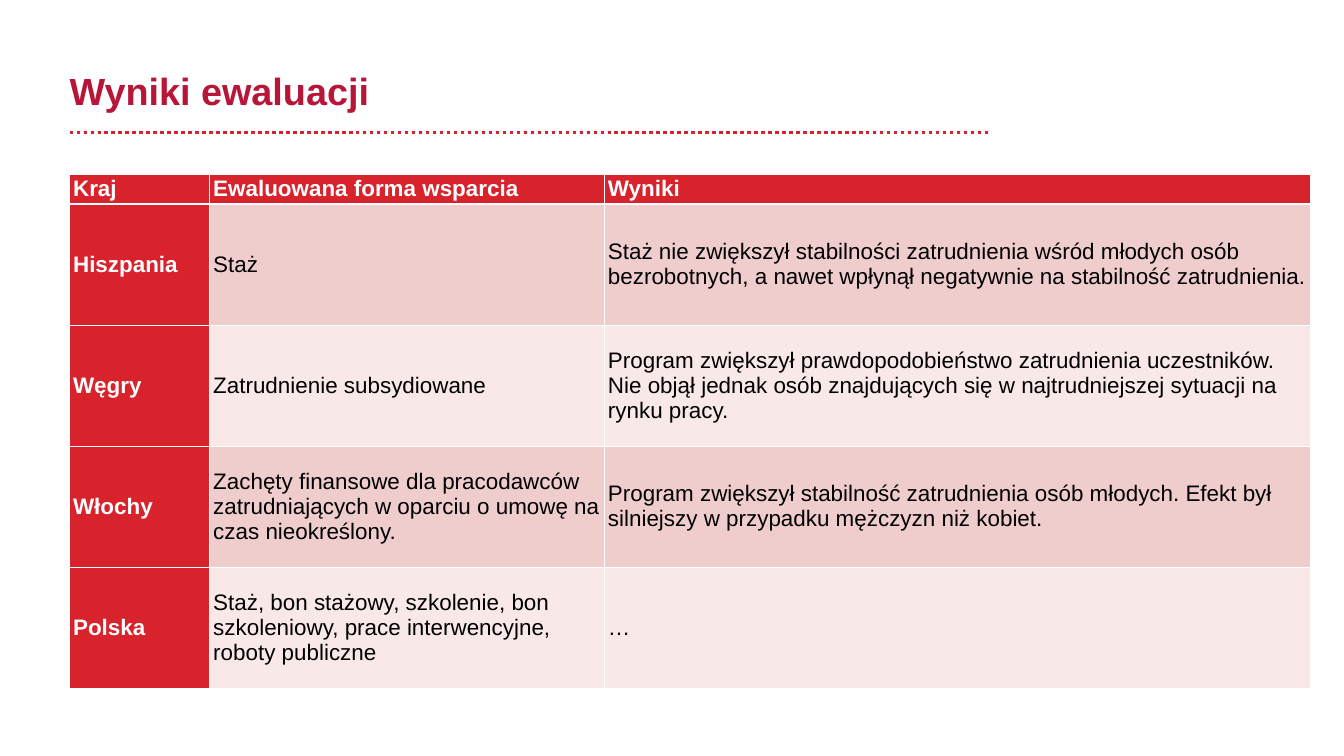
import dataclasses

import lxml.etree
import pptx
import pptx.dml.color
import pptx.enum.dml
import pptx.enum.shapes
import pptx.enum.text
import pptx.oxml.ns
import pptx.util


@dataclasses.dataclass(frozen=True)
class Theme:
    font: str = "Arial"
    title_size: int = 54
    table_size: int = 32
    title: str = "B81639"
    accent: str = "D8222C"
    bands: tuple = ("F0CDCD", "F8E8E8")
    light: str = "FFFFFF"
    dark: str = "000000"


THEME = Theme()

# Slide grid, in inches
SLIDE_WIDTH, SLIDE_HEIGHT = 26.66, 15
LEFT = 1.38
HEADING_WIDTH = 18.24
TITLE_TOP, TITLE_HEIGHT = 1.33, 0.91
RULE_TOP = 2.63
TABLE_TOP = 3.46
COLUMN_WIDTHS = (2.78, 7.83, 14)
HEADER_HEIGHT, ROW_HEIGHT = 0.59, 2.4
CELL_INSET = 0.07

ROWS = (
    ("Kraj", "Ewaluowana forma wsparcia", "Wyniki"),
    ("Hiszpania", "Staż",
     "Staż nie zwiększył stabilności zatrudnienia wśród młodych osób bezrobotnych, "
     "a nawet wpłynął negatywnie na stabilność zatrudnienia."),
    ("Węgry", "Zatrudnienie subsydiowane",
     "Program zwiększył prawdopodobieństwo zatrudnienia uczestników. "
     "Nie objął jednak osób znajdujących się w najtrudniejszej sytuacji na rynku pracy."),
    ("Włochy",
     "Zachęty finansowe dla pracodawców zatrudniających w oparciu o umowę "
     "na czas nieokreślony.",
     "Program zwiększył stabilność zatrudnienia osób młodych. "
     "Efekt był silniejszy w przypadku mężczyzn niż kobiet."),
    ("Polska",
     "Staż, bon stażowy, szkolenie, bon szkoleniowy, prace interwencyjne, "
     "roboty publiczne",
     "…"),
)


def inches(*lengths):
    return [pptx.util.Inches(length) for length in lengths]


def rgb(color):
    return pptx.dml.color.RGBColor.from_string(color)


def add_run(paragraph, text, size, color, bold):
    paragraph.alignment = pptx.enum.text.PP_ALIGN.LEFT
    run = paragraph.add_run()
    run.text = text
    run.font.name = THEME.font
    run.font.size = pptx.util.Pt(size)
    run.font.bold = bold
    run.font.color.rgb = rgb(color)


def set_title(slide, text):
    title = slide.shapes.title
    title.left, title.top, title.width, title.height = inches(
        LEFT, TITLE_TOP, HEADING_WIDTH, TITLE_HEIGHT)
    frame = title.text_frame
    frame.margin_left = frame.margin_right = frame.margin_top = frame.margin_bottom = 0
    frame.word_wrap = True
    frame.vertical_anchor = pptx.enum.text.MSO_ANCHOR.MIDDLE
    add_run(frame.paragraphs[0], text, THEME.title_size, THEME.title, True)


def add_dotted_rule(slide):
    rule = slide.shapes.add_connector(
        pptx.enum.shapes.MSO_CONNECTOR.STRAIGHT,
        *inches(LEFT, RULE_TOP, LEFT + HEADING_WIDTH, RULE_TOP))
    rule.line.color.rgb = rgb(THEME.accent)
    rule.line.width = pptx.util.Pt(5)
    rule.line.dash_style = pptx.enum.dml.MSO_LINE.ROUND_DOT
    # An empty effect list removes the connector's shadow
    lxml.etree.SubElement(rule._element.spPr, pptx.oxml.ns.qn("a:effectLst"))


def set_borders(cell, widths):
    """Draw light borders; widths maps each side (L, R, T, B) to points."""
    properties = cell._tc.get_or_add_tcPr()
    for position, (side, width) in enumerate(widths.items()):
        border = lxml.etree.Element(
            pptx.oxml.ns.qn(f"a:ln{side}"), w=str(pptx.util.Pt(width)))
        fill = lxml.etree.SubElement(border, pptx.oxml.ns.qn("a:solidFill"))
        lxml.etree.SubElement(fill, pptx.oxml.ns.qn("a:srgbClr"), val=THEME.light)
        properties.insert(position, border)


def fill_cell(cell, text, row, column):
    is_heading = row == 0 or column == 0
    cell.margin_left = cell.margin_right = pptx.util.Inches(CELL_INSET)
    cell.margin_top = cell.margin_bottom = 0
    cell.vertical_anchor = pptx.enum.text.MSO_ANCHOR.MIDDLE
    cell.fill.solid()
    cell.fill.fore_color.rgb = rgb(
        THEME.accent if is_heading else THEME.bands[(row - 1) % 2])
    # The line between header and body is heavier
    set_borders(cell, {"L": 1, "R": 1, "T": 3 if row == 1 else 1,
                       "B": 3 if row == 0 else 1})
    paragraph = cell.text_frame.paragraphs[0]
    if not is_heading:
        paragraph.space_before = paragraph.space_after = pptx.util.Pt(3)
    add_run(paragraph, text, THEME.table_size,
            THEME.light if is_heading else THEME.dark, is_heading)


def add_results_table(slide):
    heights = [HEADER_HEIGHT] + [ROW_HEIGHT] * (len(ROWS) - 1)
    table = slide.shapes.add_table(
        len(ROWS), len(COLUMN_WIDTHS),
        *inches(LEFT, TABLE_TOP, sum(COLUMN_WIDTHS), sum(heights))).table
    table.first_col = True
    for column, width in zip(table.columns, inches(*COLUMN_WIDTHS)):
        column.width = width
    for row, height in zip(table.rows, inches(*heights)):
        row.height = height
    for row, texts in enumerate(ROWS):
        for column, text in enumerate(texts):
            fill_cell(table.cell(row, column), text, row, column)


def main():
    presentation = pptx.Presentation()
    presentation.slide_width, presentation.slide_height = inches(
        SLIDE_WIDTH, SLIDE_HEIGHT)
    title_only = presentation.slide_layouts.get_by_name("Title Only")
    slide = presentation.slides.add_slide(title_only)
    add_dotted_rule(slide)
    add_results_table(slide)
    set_title(slide, "Wyniki ewaluacji")
    presentation.save("out.pptx")


if __name__ == "__main__":
    main()
